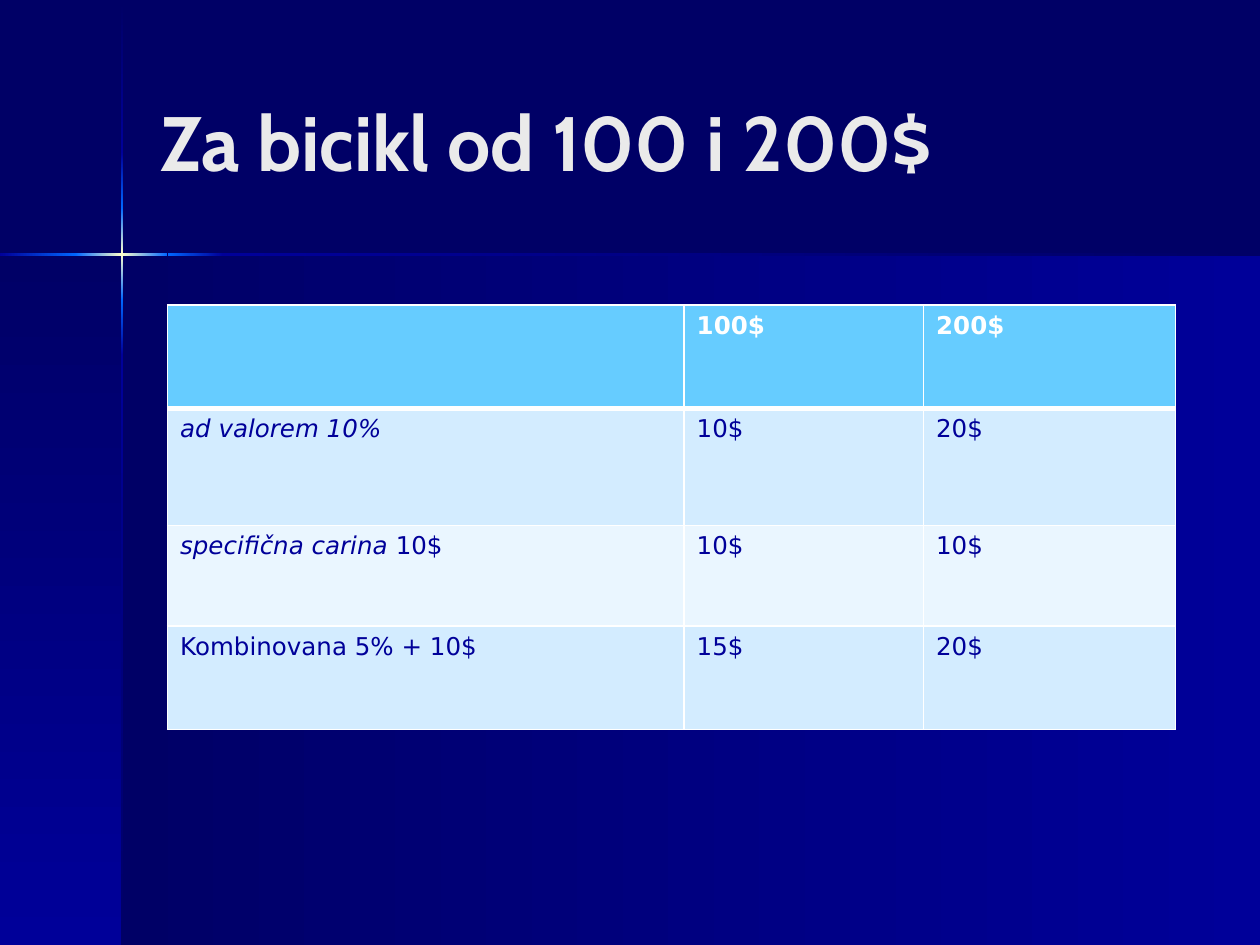
from lxml import etree
from pptx import Presentation
from pptx import util as u
from pptx.dml import color
from pptx.enum import shapes, text
from pptx.oxml import ns

NIGHT, NAVY, BLUE, GLOW = "000066", "000099", "0066FF", "FFFFCC"
HEADER, ODD_ROW, EVEN_ROW, WHITE = "66CCFF", "D3ECFF", "EAF6FF", "FFFFFF"
HORIZONTAL, VERTICAL = 0, 90
THIN, THICK = 1, 3


def rgb(value):
    """Turn a hex string into a colour."""
    return color.RGBColor.from_string(value)


def add_element(parent, tag, **attributes):
    """Add a drawing element below a parent."""
    values = {name: str(value) for name, value in attributes.items()}
    return etree.SubElement(parent, ns.qn(tag), values)


class SlideBuilder:
    """Hold the style and the current slide."""

    title_format = {"name": "Cabin", "size": u.Pt(44), "bold": True}
    cell_format = {"name": "DejaVu Sans", "size": u.Pt(14)}

    def __init__(self, presentation):
        """Start a slide with a plain dark background."""
        self.slide = presentation.slides.add_slide(presentation.slide_layouts[5])
        fill = self.slide.background.fill
        fill.solid()
        fill.fore_color.rgb = rgb(NIGHT)

    def style(self, font, colour, **formats):
        """Apply format values to a font."""
        for name, value in formats.items():
            setattr(font, name, value)
        font.color.rgb = rgb(colour)

    def band(self, box, colours, angle):
        """Add a rectangle with evenly spaced gradient stops."""
        shape = self.slide.shapes.add_shape(
            shapes.MSO_SHAPE.RECTANGLE, *map(u.Inches, box))
        shape.shadow.inherit = False
        shape.line.fill.background()
        shape.fill.gradient()
        shape.fill.gradient_angle = (360 - angle) % 360
        stops = shape.element.spPr.find(".//" + ns.qn("a:gsLst"))
        for stop in list(stops):
            stops.remove(stop)
        for index, colour in enumerate(colours):
            position = index * 100000 // (len(colours) - 1)
            stop = add_element(stops, "a:gs", pos=position)
            add_element(stop, "a:srgbClr", val=colour)

    def title(self, wording, box):
        """Fill, place and format the title placeholder."""
        shape = self.slide.shapes.title
        names = ("left", "top", "width", "height")
        for name, value in zip(names, map(u.Inches, box)):
            setattr(shape, name, value)
        frame = shape.text_frame
        frame.text = wording
        frame.word_wrap = True
        frame.vertical_anchor = text.MSO_ANCHOR.MIDDLE
        paragraph = frame.paragraphs[0]
        paragraph.alignment = text.PP_ALIGN.LEFT
        self.style(paragraph.runs[0].font, "EAEAEA", **self.title_format)
        self.slide.shapes.element.append(shape.element)

    def borders(self, cell, top, bottom):
        """Draw white borders around a cell."""
        properties = cell._tc.get_or_add_tcPr()
        widths = {"L": THIN, "R": THIN, "T": top, "B": bottom}
        for side, width in widths.items():
            line = add_element(properties, "a:ln" + side, w=u.Pt(width))
            fill = add_element(line, "a:solidFill")
            add_element(fill, "a:srgbClr", val=WHITE)

    def cell(self, cell, runs, row):
        """Write and format one table cell."""
        self.borders(cell, THICK if row == 1 else THIN,
                     THICK if row == 0 else THIN)
        cell.fill.solid()
        body_fill = ODD_ROW if row % 2 else EVEN_ROW
        cell.fill.fore_color.rgb = rgb(body_fill if row else HEADER)
        paragraph = cell.text_frame.paragraphs[0]
        for wording, italic in runs:
            run = paragraph.add_run()
            run.text = wording
            self.style(run.font, NAVY if row else WHITE, bold=row == 0,
                       italic=italic, **self.cell_format)

    def table(self, left, top, widths, heights, rows):
        """Add a table whose cells are lists of runs."""
        box = map(u.Inches, (left, top, sum(widths), sum(heights)))
        table = self.slide.shapes.add_table(
            len(heights), len(widths), *box).table
        for column, width in zip(table.columns, widths):
            column.width = u.Inches(width)
        for row, height in zip(table.rows, heights):
            row.height = u.Inches(height)
        for row, cells in enumerate(rows):
            for column, runs in enumerate(cells):
                self.cell(table.cell(row, column), runs, row)


def plain(*wordings):
    """Make one upright run per cell."""
    return [[(wording, False)] for wording in wordings]


def main():
    """Build the slide and save it."""
    presentation = Presentation()
    presentation.slide_width = u.Inches(10)
    presentation.slide_height = u.Inches(7.5)
    builder = SlideBuilder(presentation)

    builder.band((0.97, 2.02, 9.03, 5.48), (NIGHT, NAVY), HORIZONTAL)
    builder.band((0, 2.02, 0.97, 5.48), (NIGHT, NAVY), VERTICAL)
    vertical_beam = [
        (0.01, 1.21, (NIGHT, NAVY)),
        (2.82, 7.5, (NAVY, NIGHT)),
        (2.38, 2.82, (BLUE, NAVY)),
        (1.21, 1.65, (NAVY, BLUE)),
        (1.65, 2.38, (BLUE, GLOW, BLUE)),
    ]
    for start, end, colours in vertical_beam:
        builder.band((0.96, start, 0.02, end - start), colours, VERTICAL)
    horizontal_beam = [
        (1.77, 10, (NAVY, NIGHT)),
        (0, 0.61, (NAVY, BLUE)),
        (1.33, 1.77, (BLUE, NAVY)),
        (0.6, 1.33, (BLUE, GLOW, BLUE)),
    ]
    for start, end, colours in horizontal_beam:
        builder.band((start, 2.01, end - start, 0.02), colours, HORIZONTAL)

    builder.title("Za bicikl od 100 i 200$", (1.17, 0.33, 8.25, 1.57))
    rows = [
        [[], *plain("100$", "200$")],
        [[("ad valorem 10%", True)], *plain("10$", "20$")],
        [[("specifična carina ", True), ("10$", False)], *plain("10$", "10$")],
        plain("Kombinovana 5% + 10$", "15$", "20$"),
    ]
    builder.table(1.33, 2.42, (4.1, 1.9, 2), (0.82, 0.93, 0.8, 0.82), rows)
    presentation.save("out.pptx")


if __name__ == "__main__":
    main()
